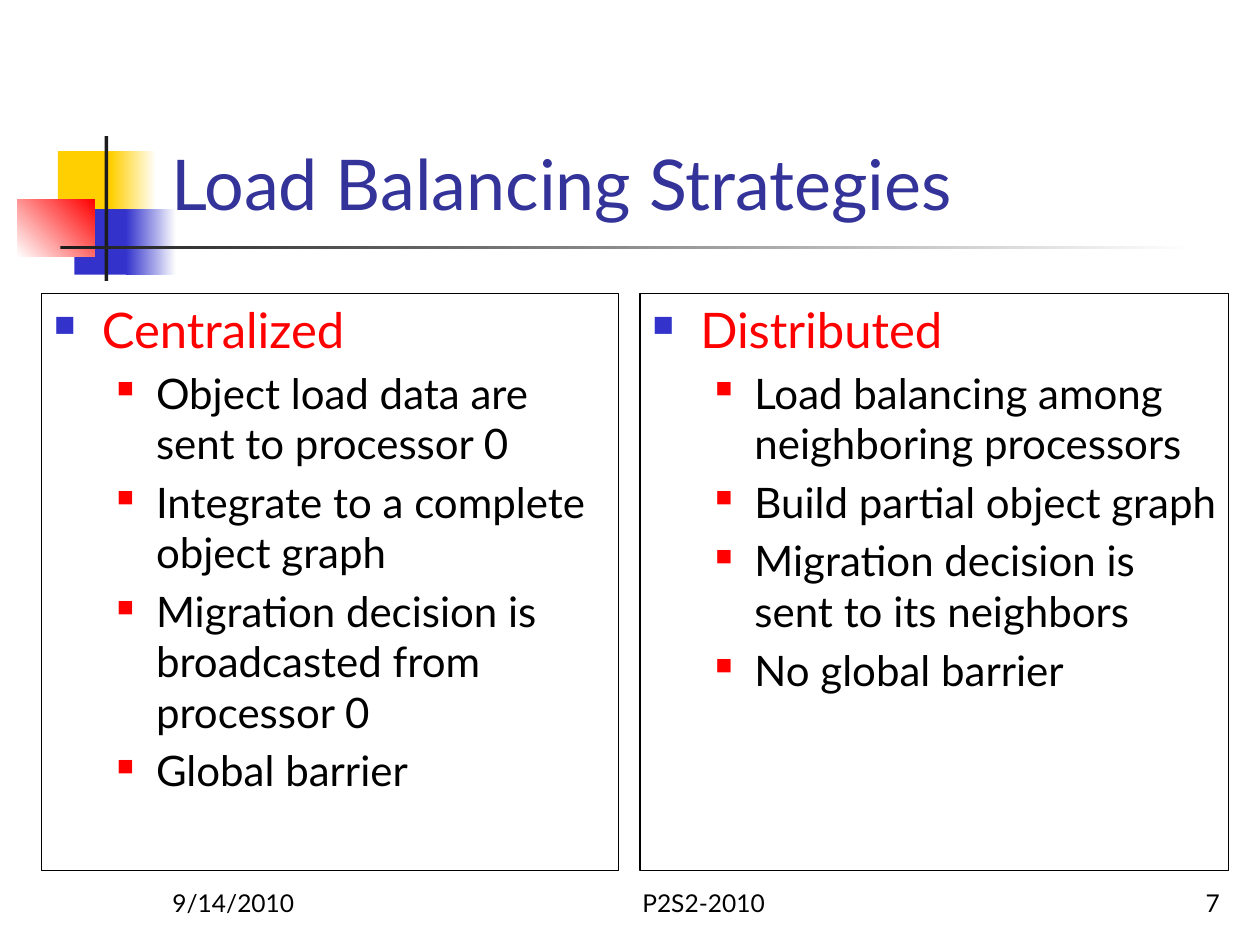
from dataclasses import dataclass

from lxml.etree import SubElement
from pptx import Presentation
from pptx.dml.color import RGBColor
from pptx.enum.shapes import MSO_SHAPE as Shape
from pptx.enum.text import MSO_ANCHOR as Anchor, PP_ALIGN as Align
from pptx.oxml.ns import qn
from pptx.util import Inches, Pt


@dataclass(frozen=True)
class Theme:
    font: str = "Lato"
    title: str = "333399"
    heading: str = "FF0000"
    text: str = "000000"
    yellow: str = "FFCF01"
    blue: str = "3333CC"
    red: str = "FF0000"
    dark: str = "1C1C1C"
    white: str = "FFFFFF"
    title_size: int = 40
    heading_size: int = 28
    item_size: int = 24
    footer_size: int = 14


class SlideBuilder:
    def __init__(self, page, theme):
        self.page = page
        self.theme = theme

    def rectangle(self, left, top, width, height):
        box = self.page.shapes.add_shape(
            Shape.RECTANGLE, Inches(left), Inches(top), Inches(width), Inches(height))
        box.shadow.inherit = False
        box.fill.background()
        box.line.fill.background()
        return box

    def block(self, place, start, end=None, angle=0):
        """Borderless rectangle, solid or fading from start to end."""
        fill = self.rectangle(*place).fill
        if end is None:
            fill.solid()
            fill.fore_color.rgb = RGBColor.from_string(start)
            return
        fill.gradient()
        fill.gradient_angle = angle
        for stop, color in zip(fill.gradient_stops, (start, end)):
            stop.color.rgb = RGBColor.from_string(color)

    def style(self, para, size, color, align=Align.LEFT):
        para.alignment = align
        for span in para.runs:
            span.font.name = self.theme.font
            span.font.size = Pt(size)
            span.font.color.rgb = RGBColor.from_string(color)

    def label(self, place, text, size, color, align=Align.LEFT):
        box = self.page.shapes.add_textbox(*(Inches(value) for value in place))
        frame = box.text_frame
        frame.word_wrap = True
        frame.vertical_anchor = Anchor.BOTTOM
        frame.text = text
        self.style(frame.paragraphs[0], size, color, align)

    def bullet(self, para, indent, hanging, color, percent):
        props = para._p.get_or_add_pPr()
        props.set("marL", str(Inches(indent)))
        props.set("indent", str(-Inches(hanging)))
        tint = SubElement(props, qn("a:buClr"))
        SubElement(tint, qn("a:srgbClr"), val=color)
        SubElement(props, qn("a:buSzPct"), val=str(percent * 1000))
        SubElement(props, qn("a:buChar"), char="■")

    def panel(self, place, heading, items):
        """Outlined box with a heading and a bulleted list."""
        theme = self.theme
        box = self.rectangle(*place)
        box.line.color.rgb = RGBColor.from_string(theme.text)
        box.line.width = Pt(0.75)
        frame = box.text_frame
        frame.word_wrap = True
        frame.vertical_anchor = Anchor.TOP
        frame.text = "\n".join([heading, *items])
        first, *rest = frame.paragraphs
        first.space_before = Pt(theme.heading_size * 0.2)
        self.style(first, theme.heading_size, theme.heading)
        self.bullet(first, 0.38, 0.38, theme.blue, 60)
        for para in rest:
            para.level = 1
            para.space_before = Pt(theme.item_size * 0.2)
            self.style(para, theme.item_size, theme.text)
            self.bullet(para, 0.81, 0.31, theme.red, 55)


def main():
    deck = Presentation()
    deck.slide_width, deck.slide_height = Inches(10), Inches(7.5)
    theme = Theme()
    builder = SlideBuilder(deck.slides.add_slide(deck.slide_layouts[6]), theme)

    # Corner ornament and title rule
    builder.block((0.46, 1.2, 0.48, 0.52), theme.yellow)
    builder.block((0.88, 1.2, 0.36, 0.52), theme.yellow, theme.white)
    builder.block((0.59, 1.66, 0.46, 0.52), theme.blue)
    builder.block((1, 1.66, 0.4, 0.52), theme.blue, theme.white)
    builder.block((0.14, 1.58, 0.61, 0.46), theme.white, theme.red, angle=45)
    builder.block((0.83, 1.08, 0.03, 1.15), theme.dark)
    builder.block((0.48, 1.95, 9, 0.03), theme.dark, theme.white)

    # Title
    builder.label((1.26, 0.36, 8.52, 1.47), "Load Balancing Strategies",
                  theme.title_size, theme.title)

    # Strategy panels
    builder.panel((0.33, 2.33, 4.58, 4.58), "Centralized", [
        "Object load data are sent to processor 0",
        "Integrate to a complete object graph",
        "Migration decision is broadcasted from processor 0",
        "Global barrier",
    ])
    builder.panel((5.08, 2.33, 4.67, 4.58), "Distributed", [
        "Load balancing among neighboring processors",
        "Build partial object graph",
        "Migration decision is sent to its neighbors",
        "No global barrier",
    ])

    # Footer
    for left, width, text, align in (
        (7.7, 2.08, "7", Align.RIGHT),
        (4, 3.17, "P2S2-2010", Align.CENTER),
        (1.27, 2.08, "9/14/2010", Align.LEFT),
    ):
        builder.label((left, 6.83, width, 0.5), text, theme.footer_size, theme.text, align)

    deck.save("out.pptx")


if __name__ == "__main__":
    main()
